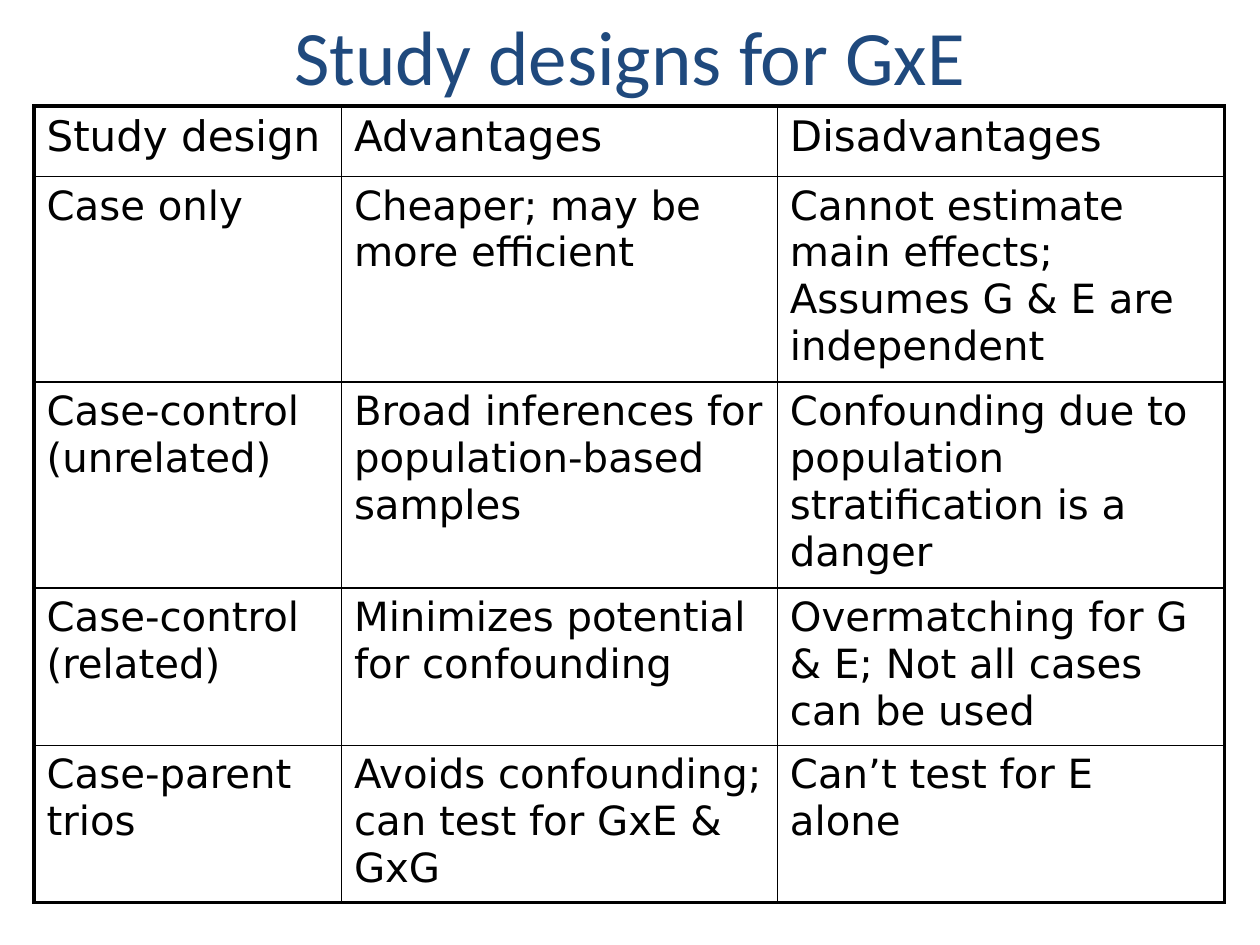
from dataclasses import dataclass

import pptx
import pptx.dml.color
import pptx.enum.text
import pptx.oxml.ns
import pptx.util
from lxml import etree
from pptx.util import Inches


@dataclass(frozen=True)
class Theme:
    title_color: str = "1F497D"
    ink: str = "000000"
    title_font: str = "Calibri"
    table_font: str = "DejaVu Sans"
    title_size: float = 44
    header_size: float = 24
    body_size: float = 23
    outer_line: float = 2.25
    inner_line: float = 1


THEME = Theme()

COLUMN_WIDTHS = (2.44, 3.46, 3.55)
ROW_HEIGHTS = (0.56, 1.59, 1.59, 1.21, 1.21)
DESIGNS = (
    ("Study design", "Advantages", "Disadvantages"),
    ("Case only", "Cheaper; may be more efficient",
     "Cannot estimate main effects; Assumes G & E are independent"),
    ("Case-control (unrelated)", "Broad inferences for population-based samples",
     "Confounding due to population stratification is a danger"),
    ("Case-control (related)", "Minimizes potential for confounding",
     "Overmatching for G & E; Not all cases can be used"),
    ("Case-parent trios", "Avoids confounding; can test for GxE & GxG",
     "Can’t test for E alone"),
)


def style_font(para, name, size, color):
    para.font.name = name
    para.font.size = pptx.util.Pt(size)
    para.font.color.rgb = pptx.dml.color.RGBColor.from_string(color)


def add_border(cell, side, width):
    qn = pptx.oxml.ns.qn
    line = etree.SubElement(cell._tc.get_or_add_tcPr(), qn(f"a:ln{side}"),
                            w=str(pptx.util.Pt(width)))
    fill = etree.SubElement(line, qn("a:solidFill"))
    etree.SubElement(fill, qn("a:srgbClr"), val=THEME.ink)


def add_title(page, text, left, top, width, height):
    box = page.shapes.add_textbox(left, top, width, height)
    frame = box.text_frame
    frame.word_wrap = True
    frame.vertical_anchor = pptx.enum.text.MSO_ANCHOR.MIDDLE
    para = frame.paragraphs[0]
    para.text = text
    para.alignment = pptx.enum.text.PP_ALIGN.CENTER
    style_font(para, THEME.title_font, THEME.title_size, THEME.title_color)


def add_design_table(page, left, top, width, height):
    """Add the grid of designs with a heavy frame and thin inner rules."""
    last_row, last_column = len(ROW_HEIGHTS) - 1, len(COLUMN_WIDTHS) - 1
    table = page.shapes.add_table(last_row + 1, last_column + 1,
                                  left, top, width, height).table
    table.first_row = False
    table.horz_banding = False
    for column, column_width in zip(table.columns, COLUMN_WIDTHS):
        column.width = Inches(column_width)
    for row, row_height in zip(table.rows, ROW_HEIGHTS):
        row.height = Inches(row_height)

    for r, texts in enumerate(DESIGNS):
        for c, text in enumerate(texts):
            cell = table.cell(r, c)
            para = cell.text_frame.paragraphs[0]
            para.text = text
            size = THEME.header_size if r == 0 else THEME.body_size
            style_font(para, THEME.table_font, size, THEME.ink)
            on_edge = {"L": c == 0, "R": c == last_column,
                       "T": r == 0, "B": r == last_row}
            for side, outer in on_edge.items():
                add_border(cell, side, THEME.outer_line if outer else THEME.inner_line)
            cell.fill.background()


def main():
    deck = pptx.Presentation()
    deck.slide_width, deck.slide_height = Inches(10), Inches(7.5)
    page = deck.slides.add_slide(deck.slide_layouts[6])
    add_title(page, "Study designs for GxE",
              Inches(0.5), Inches(-0.19), Inches(9), Inches(1.25))
    add_design_table(page, Inches(0.27), Inches(0.84),
                     Inches(sum(COLUMN_WIDTHS)), Inches(sum(ROW_HEIGHTS)))
    deck.save("out.pptx")


if __name__ == "__main__":
    main()
